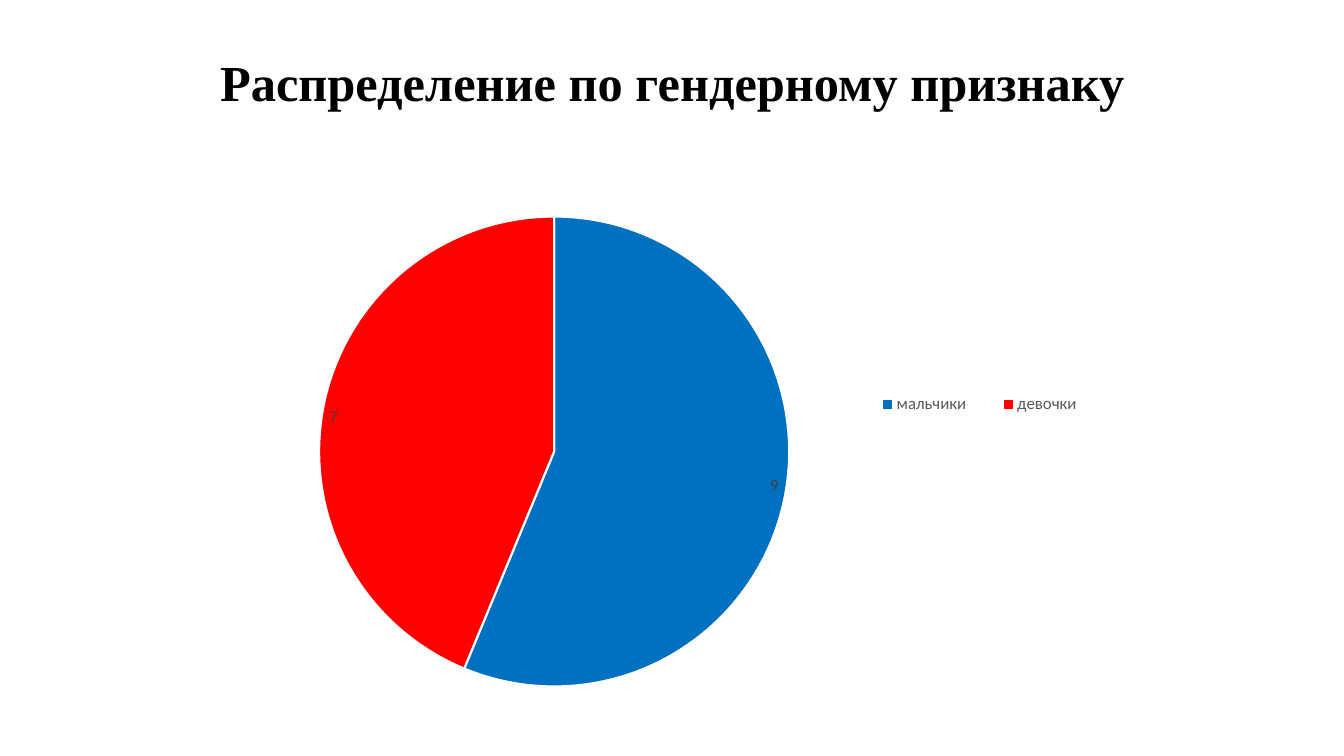
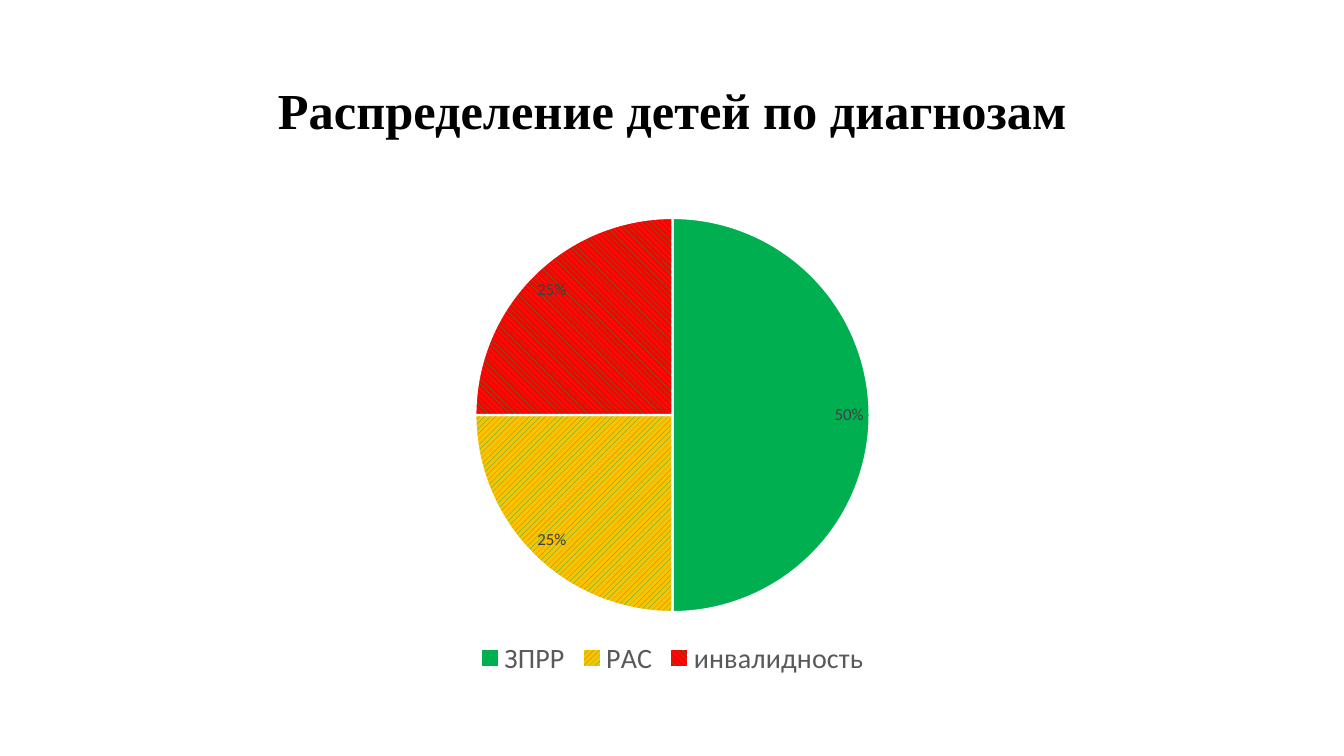
from pptx import Presentation
from pptx.chart.data import CategoryChartData
from pptx.dml.color import RGBColor
from pptx.enum.chart import XL_CHART_TYPE, XL_LABEL_POSITION, XL_LEGEND_POSITION
from pptx.enum.dml import MSO_PATTERN
from pptx.enum.text import MSO_ANCHOR, PP_ALIGN
from pptx.oxml import parse_xml
from pptx.oxml.ns import nsdecls, qn
from pptx.util import Inches, Pt

PIE = XL_CHART_TYPE.PIE
INSIDE_END = XL_LABEL_POSITION.INSIDE_END
RIGHT, BOTTOM = XL_LEGEND_POSITION.RIGHT, XL_LEGEND_POSITION.BOTTOM
UPWARD = MSO_PATTERN.WIDE_UPWARD_DIAGONAL
DOWNWARD = MSO_PATTERN.WIDE_DOWNWARD_DIAGONAL
TITLE_ONLY = 5

TITLE_FONT, CHART_FONT = "Times New Roman", "Calibri"
BLACK, WHITE, DARK_GREY, GREY = "000000", "FFFFFF", "404040", "595959"
BLUE, RED, GREEN, AMBER = "0070C0", "FF0000", "00B050", "FFC000"
LEFT, TITLE_TOP, CHART_TOP, CONTENT_WIDTH = 0.92, 0.4, 2, 11.5


def color(value):
    return RGBColor.from_string(value)


def format_font(font, name=CHART_FONT, size=10, fill=BLACK, bold=False):
    font.name, font.size, font.bold = name, Pt(size), bold
    font.color.rgb = color(fill)


def add_page(deck, title, title_height):
    """Add a page with a centred title."""
    page = deck.slides.add_slide(deck.slide_layouts[TITLE_ONLY])
    box = page.shapes.title
    box.left, box.top = Inches(LEFT), Inches(TITLE_TOP)
    box.width, box.height = Inches(CONTENT_WIDTH), Inches(title_height)
    box.text_frame.vertical_anchor = MSO_ANCHOR.MIDDLE
    para = box.text_frame.paragraphs[0]
    para.alignment, para.line_spacing = PP_ALIGN.CENTER, 0.9
    span = para.add_run()
    span.text = title
    format_font(span.font, name=TITLE_FONT, size=36, bold=True)
    return page


def place_part(element, index, area, inner=False):
    """Place a chart part by its left, top, width and height fractions."""
    for old in element.findall(qn("c:layout")):
        element.remove(old)
    target = '<c:layoutTarget val="inner"/>' if inner else ""
    modes = '<c:xMode val="edge"/><c:yMode val="edge"/>'
    sizes = "".join(f'<c:{tag} val="{value}"/>' for tag, value in zip("xywh", area))
    element.insert(index, parse_xml(
        f'<c:layout {nsdecls("c")}><c:manualLayout>{target}{modes}{sizes}'
        "</c:manualLayout></c:layout>"))


def fill_slice(point, style):
    """Fill with a plain colour or a (pattern, foreground, background) tuple."""
    fill = point.format.fill
    if isinstance(style, tuple):
        pattern, front, back = style
        fill.patterned()
        fill.pattern = pattern
        fill.fore_color.rgb, fill.back_color.rgb = color(front), color(back)
    else:
        fill.solid()
        fill.fore_color.rgb = color(style)
    point.format.line.color.rgb = color(WHITE)
    point.format.line.width = Pt(1.5)


def add_pie(page, slices, width, height, plot_area, legend_position,
            legend_size, legend_area=None, number_format="General"):
    """Add a pie from (category, value, fill style) rows."""
    data = CategoryChartData(number_format=number_format)
    data.categories = [name for name, _, _ in slices]
    data.add_series("Series 1", [value for _, value, _ in slices])
    chart = page.shapes.add_chart(PIE, Inches(LEFT), Inches(CHART_TOP),
                                  Inches(width), Inches(height), data).chart
    chart.has_title = False
    format_font(chart.font)
    plot = chart.plots[0]
    plot.vary_by_categories = True
    place_part(plot._element.getparent(), 0, plot_area, inner=True)

    # Slices and their values
    series = plot.series[0]
    for index, (_, _, style) in enumerate(slices):
        fill_slice(series.points[index], style)
    labels = series.data_labels
    labels.show_value = True
    labels.number_format, labels.number_format_is_linked = number_format, False
    labels.position = INSIDE_END
    format_font(labels.font, size=12, fill=DARK_GREY)

    # Legend
    chart.has_legend = True
    chart.legend.position = legend_position
    chart.legend.include_in_layout = False
    format_font(chart.legend.font, size=legend_size, fill=GREY)
    if legend_area:
        place_part(chart.legend._element, 1, legend_area)


def main():
    deck = Presentation()
    deck.slide_width, deck.slide_height = Inches(13.33), Inches(7.5)

    # Gender
    page = add_page(deck, "Распределение по гендерному признаку", 0.89)
    add_pie(page, [("мальчики", 9, BLUE), ("девочки", 7, RED)],
            10.17, 4.96, (0.22, 0.03, 0.46, 0.94), RIGHT, 12,
            legend_area=(0.74, 0.36, 0.25, 0.09))

    # Diagnoses
    page = add_page(deck, "Распределение детей по диагнозам", 1.45)
    add_pie(page, [("ЗПРР", 0.5, GREEN),
                   ("РАС", 0.25, (UPWARD, GREEN, AMBER)),
                   ("инвалидность", 0.25, (DOWNWARD, GREEN, RED))],
            CONTENT_WIDTH, 4.76, (0.33, 0.03, 0.34, 0.83), BOTTOM, 20,
            number_format="0%")

    deck.save("out.pptx")


if __name__ == "__main__":
    main()
